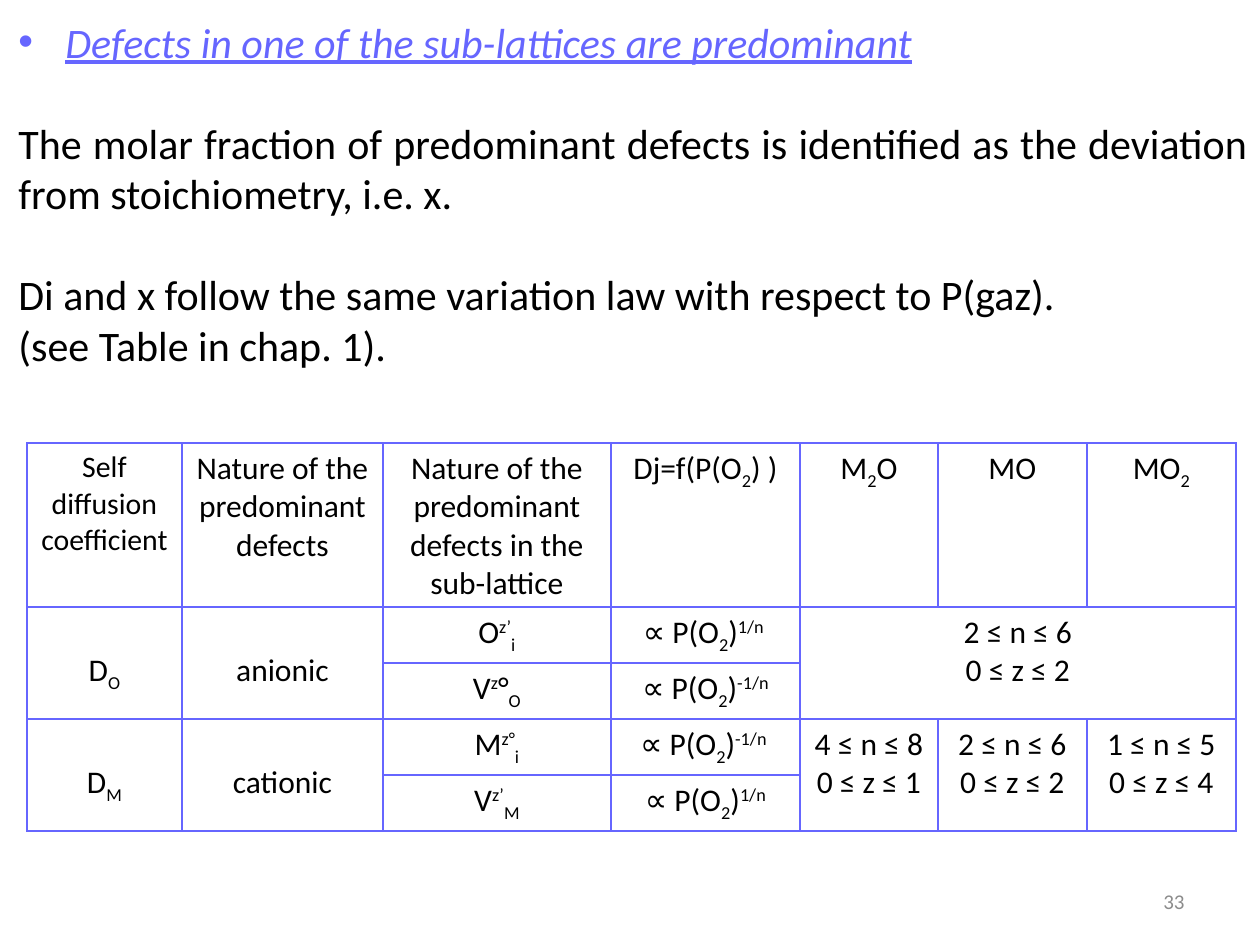
import pptx
import pptx.dml.color
import pptx.enum.text
import pptx.oxml
import pptx.oxml.ns
import pptx.util

EMU_PER_PX = 914400 / 126
FONT = "Calibri"
BLACK, VIOLET, GREY = "000000", "6666FF", "8C8C8C"
ALIGN = pptx.enum.text.PP_ALIGN
BASELINES = {"_": -25000, "^": 30000}

COLUMN_WIDTHS = [155, 201, 228, 189, 138, 149, 149]
ROW_HEIGHTS = [164, 56, 56, 56, 56]

# Each cell is a list of lines; each line a list of pieces.
# A piece starting with _ is a subscript, with ^ a superscript.
HEADERS = [
    ["Self diffusion coefficient"],
    ["Nature of the predominant defects"],
    ["Nature of the predominant defects in the sub-lattice"],
    ["Dj=f(P(O", "_2", ") )"],
    ["M", "_2", "O"],
    ["MO"],
    ["MO", "_2"],
]
POWER_LAW = ["∝ P(O", "_2", ")"]
CELLS = {(0, column): [line] for column, line in enumerate(HEADERS)}
CELLS.update({
    (1, 0): [["D", "_O"]],
    (1, 1): [["anionic"]],
    (1, 2): [["O", "^z’", "_i"]],
    (1, 3): [POWER_LAW + ["^1/n "]],
    (1, 4): [["2 ≤ n ≤ 6"], ["0 ≤ z ≤ 2"]],
    (2, 2): [["V", "^z", "°", "_O"]],
    (2, 3): [POWER_LAW + ["^-1/n"]],
    (3, 0): [["D", "_M"]],
    (3, 1): [["cationic"]],
    (3, 2): [["M", "^z°", "_i"]],
    (3, 3): [POWER_LAW + ["^-1/n "]],
    (3, 4): [["4 ≤ n ≤ 8"], ["0 ≤ z ≤ 1"]],
    (3, 5): [["2 ≤ n ≤ 6"], ["0 ≤ z ≤ 2"]],
    (3, 6): [["1 ≤ n ≤ 5"], ["0 ≤ z ≤ 4"]],
    (4, 2): [["V", "^z’", "_M"]],
    (4, 3): [POWER_LAW + ["^1/n"]],
})
# First and last cell of each merged block
MERGES = [((1, 4), (2, 6))]
MERGES += [((1, column), (2, column)) for column in (0, 1)]
MERGES += [((3, column), (4, column)) for column in (0, 1, 4, 5, 6)]


def px(length):
    return pptx.util.Emu(round(length * EMU_PER_PX))


def rgb(color):
    return pptx.dml.color.RGBColor.from_string(color)


def style(paragraph, size, color, alignment):
    paragraph.alignment = alignment
    paragraph.font.name = FONT
    paragraph.font.size = pptx.util.Pt(size)
    paragraph.font.color.rgb = rgb(color)


def add_text_box(slide, left, top, width, height):
    shape = slide.shapes.add_textbox(px(left), px(top), px(width), px(height))
    shape.text_frame.word_wrap = True
    return shape.text_frame


def add_bullet(paragraph, indent):
    properties = paragraph._p.get_or_add_pPr()
    properties.set("marL", str(px(indent)))
    properties.set("indent", str(-px(indent)))
    namespace = pptx.oxml.ns.nsdecls("a")
    for xml in (f'<a:buFont {namespace} typeface="Arial"/>',
                f'<a:buChar {namespace} char="•"/>'):
        properties.insert_element_before(
            pptx.oxml.parse_xml(xml), "a:tabLst", "a:defRPr", "a:extLst")


def add_statement(slide, left, top, width, height):
    text_frame = add_text_box(slide, left, top, width, height)
    # Text, colour, gap before in points
    lines = [
        ("Defects in one of the sub-lattices are predominant", VIOLET, 0),
        ("The molar fraction of predominant defects is identified as the "
         "deviation from stoichiometry, i.e. x.", BLACK, 29),
        ("Di and x follow the same variation law with respect to P(gaz).",
         BLACK, 29),
        ("(see Table in chap. 1).", BLACK, 0),
    ]
    for index, (text, color, gap) in enumerate(lines):
        paragraph = (text_frame.add_paragraph() if index
                     else text_frame.paragraphs[0])
        paragraph.text = text
        paragraph.space_before = pptx.util.Pt(gap)
        style(paragraph, 24, color, ALIGN.JUSTIFY)
    heading = text_frame.paragraphs[0]
    heading.font.italic = heading.font.underline = True
    add_bullet(heading, 47)


def set_borders(cell, color, width):
    properties = cell._tc.get_or_add_tcPr()
    for index, side in enumerate("LRTB"):
        properties.insert(index, pptx.oxml.parse_xml(
            f'<a:ln{side} {pptx.oxml.ns.nsdecls("a")} '
            f'w="{pptx.util.Pt(width)}"><a:solidFill>'
            f'<a:srgbClr val="{color}"/></a:solidFill></a:ln{side}>'))


def fill_cell(cell, lines, size):
    for index, pieces in enumerate(lines):
        paragraph = (cell.text_frame.add_paragraph() if index
                     else cell.text_frame.paragraphs[0])
        style(paragraph, size, BLACK, ALIGN.CENTER)
        for piece in pieces:
            run = paragraph.add_run()
            baseline = BASELINES.get(piece[0])
            run.text = piece[1:] if baseline else piece
            if baseline:
                run._r.get_or_add_rPr().set("baseline", str(baseline))


def add_defect_table(slide, left, top):
    table = slide.shapes.add_table(
        len(ROW_HEIGHTS), len(COLUMN_WIDTHS), px(left), px(top),
        px(sum(COLUMN_WIDTHS)), px(sum(ROW_HEIGHTS))).table
    table.first_row = table.horz_banding = False
    for column, width in zip(table.columns, COLUMN_WIDTHS):
        column.width = px(width)
    for row, height in zip(table.rows, ROW_HEIGHTS):
        row.height = px(height)
    for cell in table.iter_cells():
        cell.fill.background()
        set_borders(cell, VIOLET, 1)
    for first, last in MERGES:
        table.cell(*first).merge(table.cell(*last))
    for position, lines in CELLS.items():
        fill_cell(table.cell(*position), lines, 17 if position == (0, 0) else 18)
    # Row labels sit one line lower than the other cells
    for row in (1, 3):
        for column in (0, 1):
            table.cell(row, column).margin_top = px(45)


def add_slide_number(slide, left, top, width, height):
    text_frame = add_text_box(slide, left, top, width, height)
    text_frame.vertical_anchor = pptx.enum.text.MSO_ANCHOR.MIDDLE
    text_frame.text = "33"
    style(text_frame.paragraphs[0], 12, GREY, ALIGN.RIGHT)


def main():
    presentation = pptx.Presentation()
    presentation.slide_width = px(1260)
    presentation.slide_height = px(945)
    slide = presentation.slides.add_slide(presentation.slide_layouts[6])
    add_statement(slide, 6, 10, 1254, 369)
    add_defect_table(slide, 27, 443)
    add_slide_number(slide, 903, 876, 294, 50)
    presentation.save("out.pptx")


if __name__ == "__main__":
    main()
